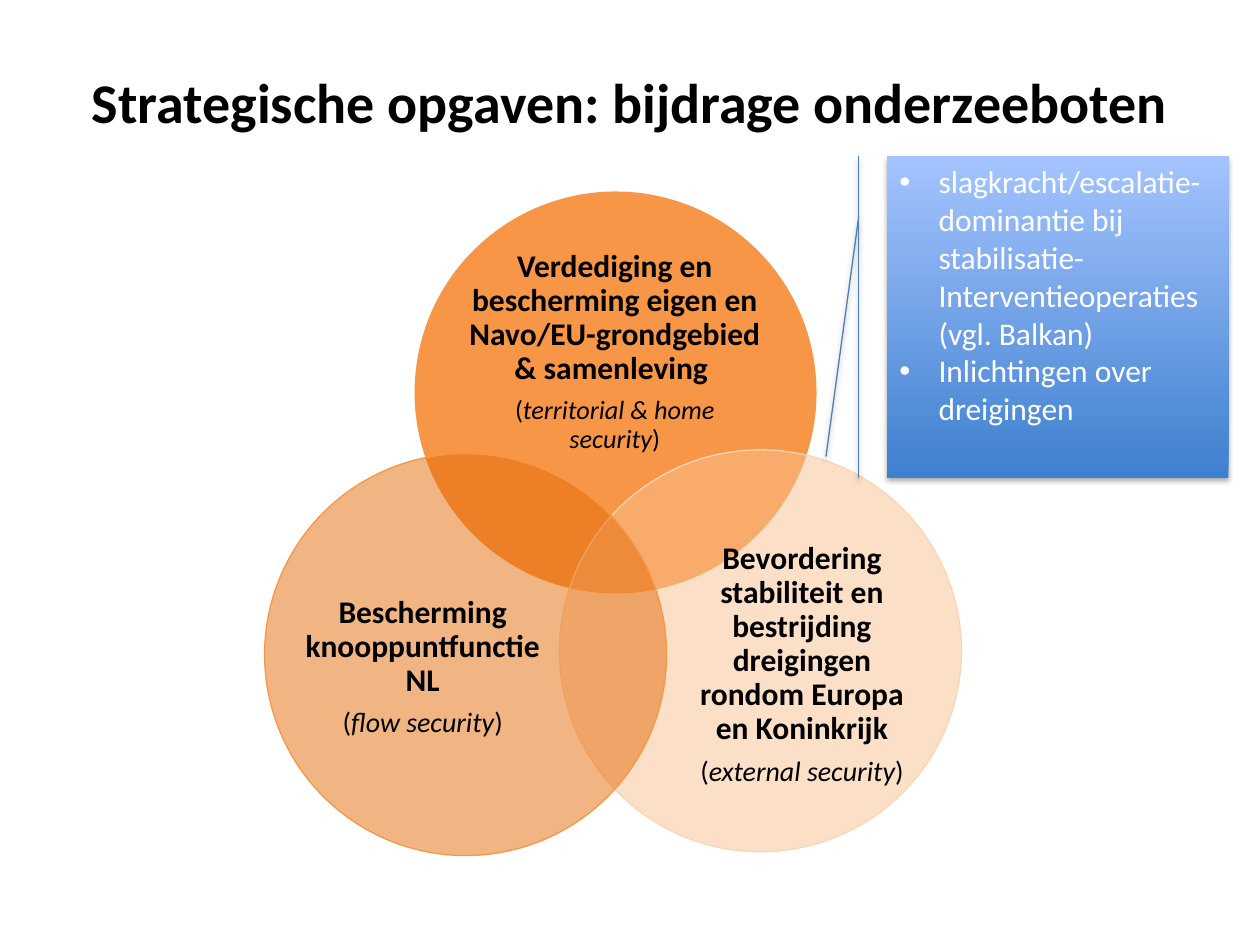
"""Build the slide on strategic tasks and the contribution of submarines."""
from dataclasses import dataclass
from typing import Optional

from lxml import etree
from pptx import Presentation
from pptx.dml.color import RGBColor
from pptx.enum.shapes import MSO_SHAPE
from pptx.enum.text import MSO_ANCHOR, PP_ALIGN
from pptx.oxml import parse_xml
from pptx.oxml.ns import nsdecls, qn
from pptx.util import Inches, Pt

OVAL = MSO_SHAPE.OVAL
CALLOUT = MSO_SHAPE.LINE_CALLOUT_1_ACCENT_BAR
LEFT, CENTER = PP_ALIGN.LEFT, PP_ALIGN.CENTER
TOP, MIDDLE = MSO_ANCHOR.TOP, MSO_ANCHOR.MIDDLE

BLACK = RGBColor(0x00, 0x00, 0x00)
WHITE = RGBColor(0xFF, 0xFF, 0xFF)
ORANGE = RGBColor(0xF7, 0x96, 0x46)
DARK_ORANGE = RGBColor(0xE4, 0x6C, 0x0A)
LIGHT_ORANGE = RGBColor(0xFA, 0xC0, 0x90)
PALE_ORANGE = RGBColor(0xFC, 0xD5, 0xB5)
BLUE = RGBColor(0x3F, 0x80, 0xCE)
LIGHT_BLUE = RGBColor(0xA4, 0xC4, 0xFF)
LINE_BLUE = RGBColor(0x4B, 0x7E, 0xBC)

FONT = "Calibri"
DIAMETER = 3.19
SHADOW = (
    f'<a:effectLst {nsdecls("a")}>'
    '<a:outerShdw blurRad="39370" dist="22860" dir="5400000" rotWithShape="0">'
    '<a:srgbClr val="000000"><a:alpha val="35000"/></a:srgbClr>'
    "</a:outerShdw></a:effectLst>"
)


@dataclass
class Task:
    """A circle of the diagram with its label."""
    left: float
    top: float
    fill: RGBColor
    line: Optional[RGBColor]
    label_box: tuple[float, float, float, float]
    name: str
    security: str
    security_size: int


TASKS = [
    Task(3.29, 1.52, ORANGE, None, (3.71, 2.08, 2.34, 1.43),
         "Verdediging en bescherming eigen en Navo/EU-grondgebied & samenleving ",
         "territorial & home security", 15),
    Task(4.44, 3.57, LIGHT_ORANGE, PALE_ORANGE, (5.41, 4.4, 1.91, 1.75),
         "Bevordering stabiliteit en bestrijding dreigingen rondom Europa en Koninkrijk",
         "external security", 16),
    Task(2.1, 3.6, DARK_ORANGE, ORANGE, (2.4, 4.42, 1.91, 1.75),
         "Bescherming knooppuntfunctie NL", "flow security", 16),
]
CONTRIBUTIONS = [
    "slagkracht/escalatie-dominantie bij stabilisatie- Interventieoperaties (vgl. Balkan)",
    "Inlichtingen over dreigingen",
]


def format_run(r, size: int, color: RGBColor, bold: bool = False, italic: bool = False) -> None:
    """Set the font of a run."""
    r.font.name, r.font.size = FONT, Pt(size)
    r.font.bold, r.font.italic = bold, italic
    r.font.color.rgb = color


def add_title(slide, text: str) -> None:
    """Place and format the title."""
    sp = slide.shapes.title
    sp.left, sp.top, sp.width, sp.height = map(Inches, (0.5, 0.18, 9, 1.25))
    tf = sp.text_frame
    tf.text, tf.vertical_anchor = text, MIDDLE
    tf.paragraphs[0].alignment = CENTER
    format_run(tf.paragraphs[0].runs[0], 32, BLACK, bold=True)


def add_circle(slide, task: Task) -> None:
    """Draw a circle, half transparent when it is outlined."""
    sp = slide.shapes.add_shape(
        OVAL, Inches(task.left), Inches(task.top), Inches(DIAMETER), Inches(DIAMETER))
    sp.shadow.inherit = False
    sp.fill.solid()
    sp.fill.fore_color.rgb = task.fill
    if task.line is None:
        sp.line.fill.background()
        return
    sp.line.color.rgb, sp.line.width = task.line, Pt(0.75)
    color = sp._element.spPr.find(qn("a:solidFill")).find(qn("a:srgbClr"))
    etree.SubElement(color, qn("a:alpha")).set("val", "50000")


def add_label(slide, task: Task) -> None:
    """Write the task and its kind of security."""
    tf = slide.shapes.add_textbox(*map(Inches, task.label_box)).text_frame
    tf.word_wrap, tf.vertical_anchor = True, MIDDLE
    tf.margin_left = tf.margin_right = tf.margin_top = tf.margin_bottom = 0
    tf.text = task.name
    format_run(tf.paragraphs[0].runs[0], 18, BLACK, bold=True)
    p = tf.add_paragraph()
    for text in ("(", task.security, ")"):
        r = p.add_run()
        r.text = text
        format_run(r, task.security_size, BLACK, italic=text == task.security)
    for p in tf.paragraphs:
        p.alignment, p.line_spacing, p.space_after = CENTER, 0.9, Pt(6)


def add_callout(slide, items: list[str]) -> None:
    """Draw the callout with its bulleted list."""
    sp = slide.shapes.add_shape(CALLOUT, *map(Inches, (7.04, 1.24, 2.71, 2.55)))
    for i, value in enumerate((0.188, -0.083, 0.935, -0.179)):
        sp.adjustments[i] = value
    sp.fill.gradient()
    sp.fill.gradient_angle = 90
    for stop, color, position in zip(sp.fill.gradient_stops, (BLUE, LIGHT_BLUE), (0, 1)):
        stop.color.rgb, stop.position = color, position
    sp.line.color.rgb, sp.line.width = LINE_BLUE, Pt(0.75)
    sp._element.spPr.append(parse_xml(SHADOW))
    tf = sp.text_frame
    tf.word_wrap, tf.vertical_anchor = True, TOP
    tf.text = "\n".join(items)
    for p in tf.paragraphs:
        p.alignment = LEFT
        format_run(p.runs[0], 18, WHITE)
        pPr = p._p.get_or_add_pPr()
        pPr.set("marL", str(Inches(0.31)))
        pPr.set("indent", str(Inches(-0.31)))
        etree.SubElement(pPr, qn("a:buFont")).set("typeface", "Arial")
        etree.SubElement(pPr, qn("a:buChar")).set("char", "•")


def main() -> None:
    """Build and save the presentation."""
    prs = Presentation()
    prs.slide_width, prs.slide_height = Inches(10), Inches(7.5)
    slide = prs.slides.add_slide(prs.slide_layouts[5])
    add_title(slide, "Strategische opgaven: bijdrage onderzeeboten")
    for task in TASKS:
        add_circle(slide, task)
        add_label(slide, task)
    add_callout(slide, CONTRIBUTIONS)
    prs.save("out.pptx")


if __name__ == "__main__":
    main()
